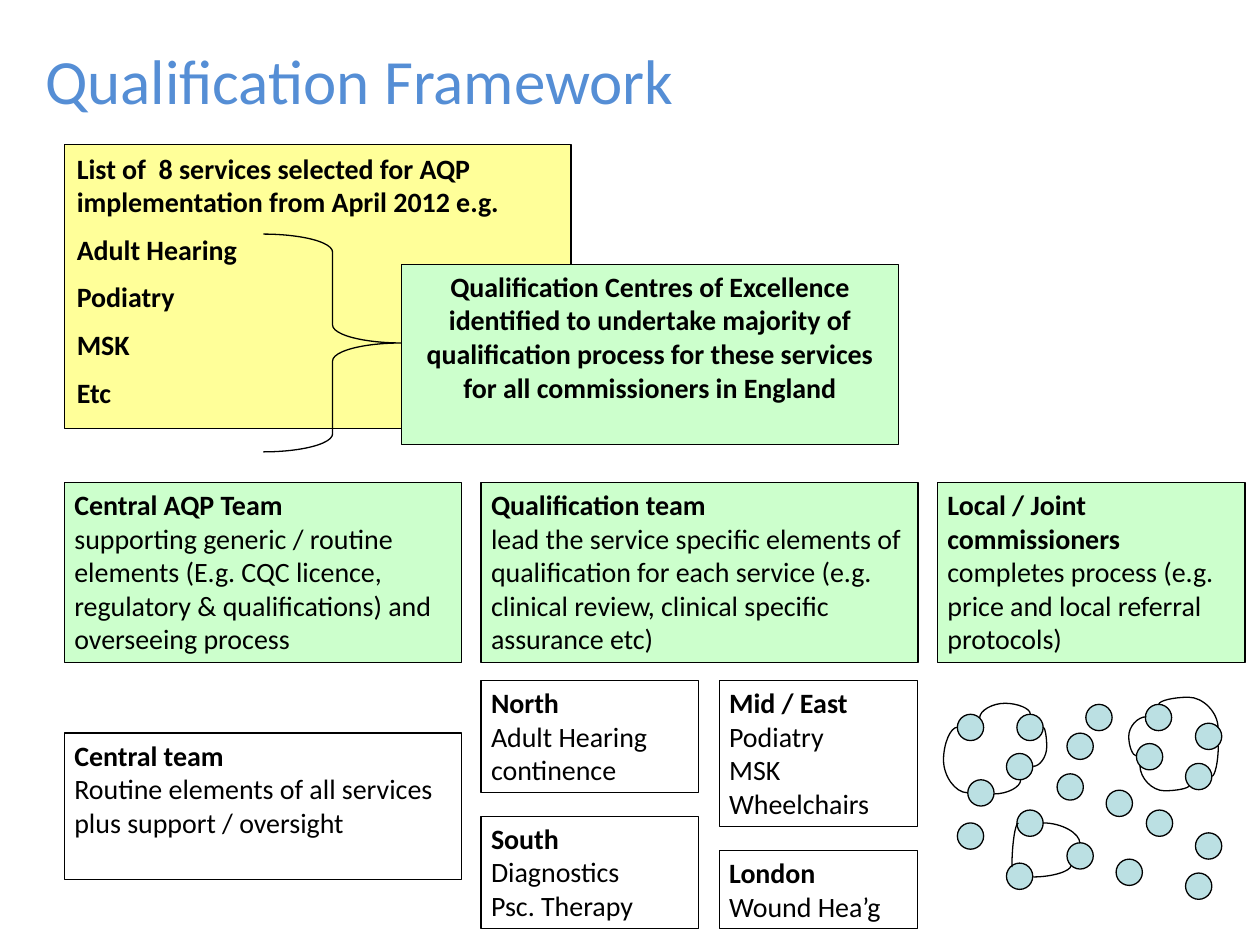
from lxml import etree
from pptx import Presentation
from pptx.dml.color import RGBColor
from pptx.enum.shapes import MSO_CONNECTOR, MSO_SHAPE
from pptx.enum.text import MSO_ANCHOR, PP_ALIGN
from pptx.oxml.ns import qn
from pptx.util import Cm, Pt

RECT = MSO_SHAPE.RECTANGLE
BRACE = MSO_SHAPE.RIGHT_BRACE
NODE = MSO_SHAPE.FLOWCHART_CONNECTOR
CURVE = MSO_CONNECTOR.CURVE
LEFT, CENTER = PP_ALIGN.LEFT, PP_ALIGN.CENTER
TOP, MIDDLE = MSO_ANCHOR.TOP, MSO_ANCHOR.MIDDLE

BLACK = RGBColor(0x00, 0x00, 0x00)
BLUE = RGBColor(0x55, 0x8E, 0xD5)
YELLOW = RGBColor(0xFF, 0xFF, 0x99)
GREEN = RGBColor(0xCC, 0xFF, 0xCC)
TEAL = RGBColor(0xBB, 0xE0, 0xE3)

FONT = "Calibri"
LINE_WIDTH = Pt(0.75)
NODE_SIZE = 0.53
COL_1, COL_2, COL_2B, COL_3 = 1.3, 9.7, 14.5, 18.9
ROLE_TOP, REGION_TOP = 9.73, 13.72

SERVICES = [
    "List of  8 services selected for AQP implementation from April 2012 e.g.",
    "Adult Hearing", "Podiatry", "MSK", "Etc",
]
CENTRES = ("Qualification Centres of Excellence identified to undertake majority of "
           "qualification process for these services for all commissioners in England")

# left, width, heading, description
ROLES = [
    (COL_1, 8, "Central AQP Team",
     "supporting generic / routine elements (E.g. CQC licence, regulatory & "
     "qualifications) and overseeing process"),
    (COL_2, 8.81, "Qualification team",
     "lead the service specific elements of qualification for each service "
     "(e.g. clinical review, clinical specific assurance etc)"),
    (COL_3, 6.2, "Local / Joint commissioners",
     "completes process (e.g. price and local referral protocols)"),
]
# left, top, width, height, heading and lines
TEAMS = [
    (COL_1, 14.78, 8, 2.95,
     ["Central team", "Routine elements of all services plus support / oversight"]),
    (COL_2, REGION_TOP, 4.39, 2.26, ["North", "Adult Hearing", "continence"]),
    (COL_2, 16.46, 4.39, 2.26, ["South", "Diagnostics", "Psc. Therapy"]),
    (COL_2B, REGION_TOP, 4, 2.95, ["Mid / East", "Podiatry", "MSK", "Wheelchairs"]),
    (COL_2B, 17.15, 4, 1.57, ["London", "Wound Hea’g"]),
]
NODES = [
    (19.3, 14.4), (20.29, 15.19), (20.5, 14.4), (21.51, 14.78), (21.31, 15.6),
    (21.89, 14.2), (22.91, 14.99), (23.09, 14.2), (24.1, 14.58), (23.9, 15.39),
    (19.3, 16.59), (20.29, 17.4), (19.51, 15.72), (21.51, 16.99), (23.11, 16.33),
    (22.3, 15.93), (20.5, 16.33), (22.5, 17.32), (24.1, 16.79), (23.9, 17.6),
]
# frame before rotation, rotation, flip, bend (None for a quarter turn)
ARCS = [
    ((20.22, 13.92, 0.08, 1.02), 270, "", 3.67),
    ((20.17, 15.6, 0.28, 0.53), 90, "", None),
    ((19.3, 14.66, 0.2, 1.32), 180, "", 2.4),
    ((20.83, 14.66, 0.2, 0.79), 0, "v", 1.36),
    ((23.72, 13.84, 0.48, 1.19), 90, "v", -0.29),
    ((22.91, 14.45, 0.2, 0.79), 180, "v", 1.78),
    ((23.27, 15.14, 0.41, 0.99), 270, "h", 1.25),
    ((24.43, 15.04, 0.13, 0.61), 0, "v", None),
    ((20.02, 16.97, 0.89, 0.13), 270, "", None),
    ((21.03, 16.59, 0.74, 0.41), 0, "", None),
    ((20.83, 17.45, 0.76, 0.23), 0, "v", None),
]


def write(s, lines, size=16, color=BLACK, bold=0, align=LEFT, anchor=TOP,
          inset=(0.2, 0.1), gap=0):
    """Fill a shape with paragraphs; the first `bold` of them are bold."""
    tf = s.text_frame
    tf.word_wrap = True
    tf.vertical_anchor = anchor
    tf.margin_left = tf.margin_right = Cm(inset[0])
    tf.margin_top = tf.margin_bottom = Cm(inset[1])
    for i, line in enumerate(lines):
        p = tf.add_paragraph() if i else tf.paragraphs[0]
        p.alignment = align
        p.space_before = Pt(gap if i else 0)
        r = p.add_run()
        r.text = line
        r.font.name = FONT
        r.font.size = Pt(size)
        r.font.bold = i < bold
        r.font.color.rgb = color


def add_shape(slide, kind, left, top, width, height, fill=None):
    s = slide.shapes.add_shape(kind, Cm(left), Cm(top), Cm(width), Cm(height))
    s.shadow.inherit = False
    if fill is None:
        s.fill.background()
    else:
        s.fill.solid()
        s.fill.fore_color.rgb = fill
    s.line.color.rgb = BLACK
    s.line.width = LINE_WIDTH
    return s


def add_arc(slide, frame, rotation, flip, bend):
    """Add a curved connector; the frame is the one it has before rotation."""
    left, top, width, height = frame
    x1, x2 = left, left + width
    y1, y2 = top, top + height
    if flip == "h":
        x1, x2 = x2, x1
    elif flip == "v":
        y1, y2 = y2, y1
    c = slide.shapes.add_connector(CURVE, Cm(x1), Cm(y1), Cm(x2), Cm(y2))
    c.line.color.rgb = BLACK
    c.line.width = LINE_WIDTH
    sp_pr = c._element.spPr
    etree.SubElement(sp_pr, qn("a:effectLst"))
    sp_pr.find(qn("a:xfrm")).set("rot", str(rotation * 60000))
    geom = sp_pr.find(qn("a:prstGeom"))
    if bend is None:
        geom.set("prst", "curvedConnector2")
    else:
        guide = etree.SubElement(geom.find(qn("a:avLst")), qn("a:gd"))
        guide.set("name", "adj1")
        guide.set("fmla", f"val {round(bend * 100000)}")


def add_title(slide, text):
    s = slide.shapes.title
    s.left, s.top, s.width, s.height = Cm(0.66), Cm(0), Cm(18.03), Cm(3.18)
    write(s, [text], size=36, color=BLUE, anchor=MIDDLE, inset=(0.25, 0.13))


def main():
    prs = Presentation()
    prs.slide_width, prs.slide_height = Cm(25.4), Cm(19.05)
    slide = prs.slides.add_slide(prs.slide_layouts[5])
    add_title(slide, "Qualification Framework")

    s = add_shape(slide, RECT, COL_1, 2.92, 10.21, 5.72, YELLOW)
    write(s, SERVICES, bold=len(SERVICES), inset=(0.25, 0.13), gap=8)
    brace = add_shape(slide, BRACE, 5.31, 4.72, 2.79, 4.39)
    brace.adjustments[0] = 0.13
    s = add_shape(slide, RECT, 8.1, 5.33, 10.01, 3.63, GREEN)
    write(s, [CENTRES], bold=1, align=CENTER)

    for left, width, heading, description in ROLES:
        s = add_shape(slide, RECT, left, ROLE_TOP, width, 3.63, GREEN)
        write(s, [heading, description], bold=1)
    for left, top, width, height, lines in TEAMS:
        s = add_shape(slide, RECT, left, top, width, height)
        write(s, lines, bold=1)

    for left, top in NODES:
        add_shape(slide, NODE, left, top, NODE_SIZE, NODE_SIZE, TEAL)
    for arc in ARCS:
        add_arc(slide, *arc)

    prs.save("out.pptx")


if __name__ == "__main__":
    main()
